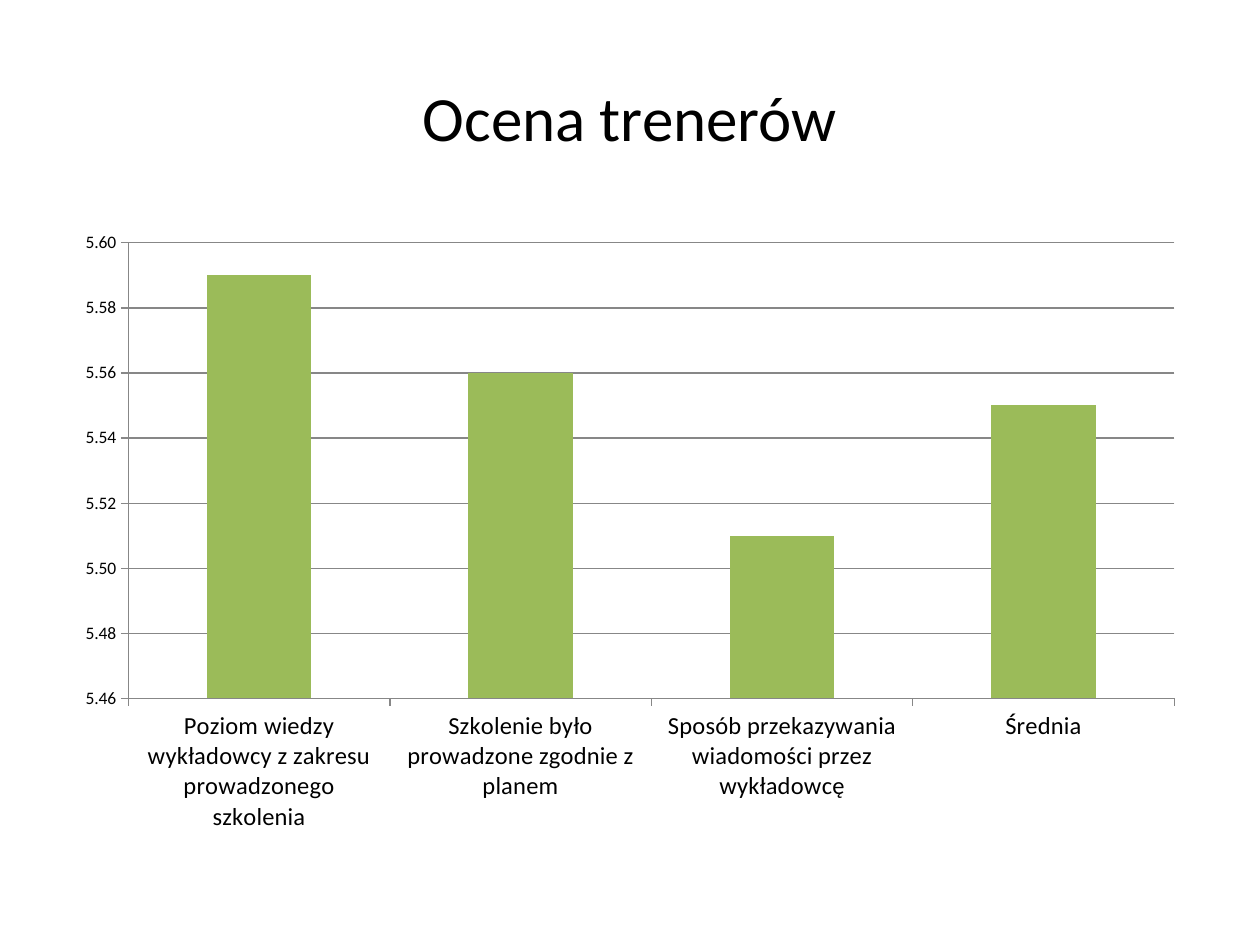
from pptx import Presentation
from pptx.chart.data import CategoryChartData as Data
from pptx.dml.color import RGBColor
from pptx.enum.chart import XL_CHART_TYPE as Kind, XL_TICK_MARK as Tick
from pptx.enum.text import MSO_ANCHOR as Anchor, PP_ALIGN as Align
from pptx.util import Inches, Pt

TITLE = "Ocena trenerów"
SCORES = [
    ("Poziom wiedzy wykładowcy z zakresu prowadzonego szkolenia", 5.59),
    ("Szkolenie było prowadzone zgodnie z planem", 5.56),
    ("Sposób przekazywania wiadomości przez wykładowcę", 5.51),
    ("Średnia", 5.55),
]
FACE = "Calibri"
BLACK = RGBColor(0x00, 0x00, 0x00)
GREEN = RGBColor(0x9B, 0xBB, 0x59)
GRAY = RGBColor(0x87, 0x87, 0x87)


def style(font, size):
    font.name, font.size, font.bold = FACE, Pt(size), False
    font.color.rgb = BLACK


def rule(line):
    line.color.rgb = GRAY
    line.width = Pt(0.75)


deck = Presentation()
deck.slide_width, deck.slide_height = Inches(10), Inches(7.5)
slide = deck.slides.add_slide(deck.slide_layouts[5])

title = slide.shapes.title
title.left, title.top = Inches(0.5), Inches(0.3)
title.width, title.height = Inches(9), Inches(1.25)
frame = title.text_frame
frame.vertical_anchor = Anchor.MIDDLE
para = frame.paragraphs[0]
para.alignment = Align.CENTER
run = para.add_run()
run.text = TITLE
style(run.font, 36)

data = Data(number_format="0.00")
data.categories = [name for name, score in SCORES]
data.add_series("Series 1", [score for name, score in SCORES])
chart = slide.shapes.add_chart(
    Kind.COLUMN_CLUSTERED, Inches(0.5), Inches(1.75), Inches(9), Inches(4.95), data
).chart
chart.has_title = False
chart.has_legend = False
style(chart.font, 10)

plot = chart.plots[0]
plot.vary_by_categories = False
plot.gap_width = 150
fill = plot.series[0].format.fill
fill.solid()
fill.fore_color.rgb = GREEN

for axis, size in ((chart.category_axis, 14), (chart.value_axis, 10)):
    style(axis.tick_labels.font, size)
    axis.major_tick_mark = Tick.OUTSIDE
    axis.minor_tick_mark = Tick.NONE
    rule(axis.format.line)

scale = chart.value_axis
scale.minimum_scale, scale.maximum_scale = 5.46, 5.6
scale.major_unit = 0.02
scale.tick_labels.number_format = "0.00"
scale.tick_labels.number_format_is_linked = False
scale.has_major_gridlines = True
rule(scale.major_gridlines.format.line)

deck.save("out.pptx")
